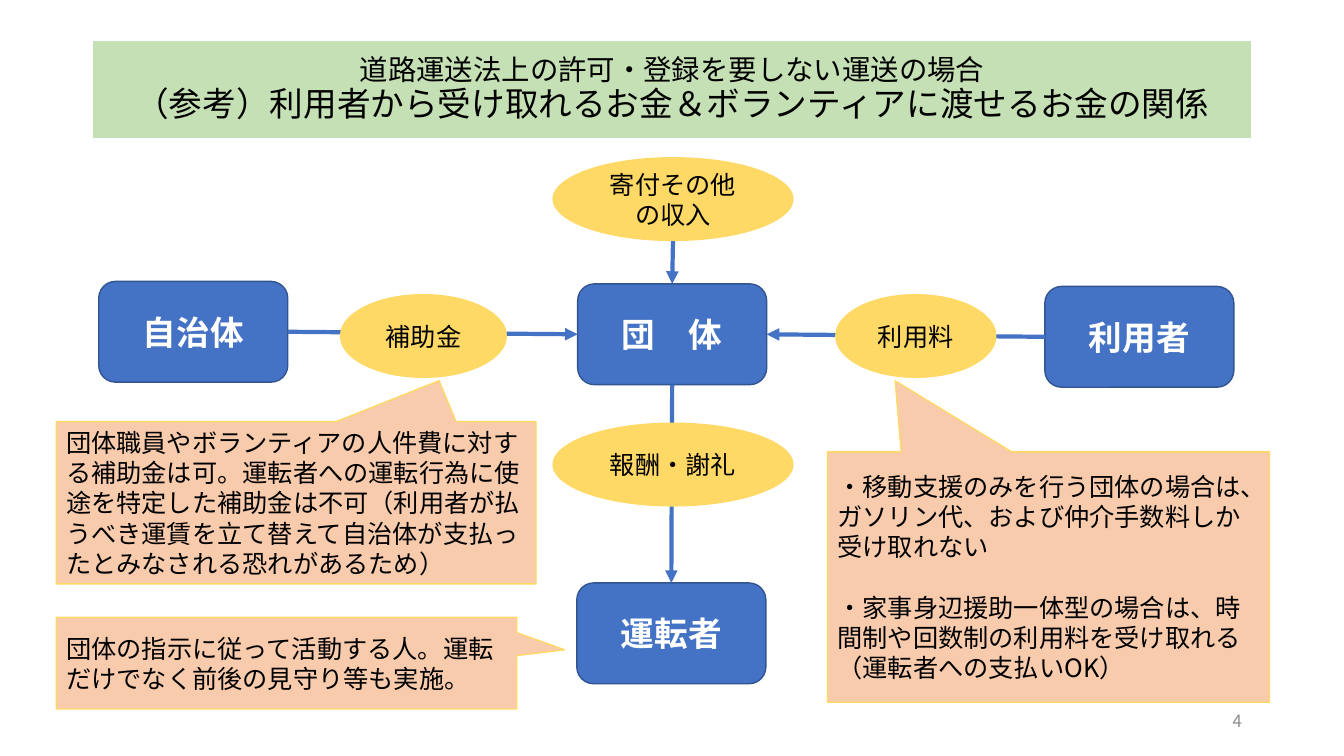
from lxml import etree
from pptx import Presentation
from pptx.dml.color import RGBColor
from pptx.enum.shapes import MSO_CONNECTOR, MSO_SHAPE
from pptx.enum.text import MSO_ANCHOR, PP_ALIGN
from pptx.oxml.ns import qn
from pptx.util import Inches, Pt

RECT, OVAL = MSO_SHAPE.RECTANGLE, MSO_SHAPE.OVAL
ROUNDED, CALLOUT = MSO_SHAPE.ROUNDED_RECTANGLE, MSO_SHAPE.RECTANGULAR_CALLOUT
STRAIGHT = MSO_CONNECTOR.STRAIGHT
MIDDLE = MSO_ANCHOR.MIDDLE
LEFT, CENTER, RIGHT = PP_ALIGN.LEFT, PP_ALIGN.CENTER, PP_ALIGN.RIGHT

FONT = "Noto Sans CJK JP"
COLORS = {
    "title": "C5E0B4", "node": "4472C4", "node_line": "325491",
    "money": "FFD966", "note": "F8CBAD", "white": "FFFFFF",
    "text": "000000", "page": "8C8C8C",
}

# The slide is a grid of 160 columns by 90 rows with square cells
SLIDE_W, SLIDE_H = Inches(13.33), Inches(7.5)
CELL = SLIDE_H / 90


def cells(*counts):
    return [round(n * CELL) for n in counts]


def rgb(name):
    return RGBColor.from_string(COLORS[name])


def add_text(sp, lines, size, color="text", align=CENTER, bold=False,
             gap=0, spacing=None):
    """Write (text, size) lines; a plain string takes the common size."""
    tf = sp.text_frame
    tf.word_wrap = True
    tf.vertical_anchor = MIDDLE
    for i, line in enumerate(lines):
        text, points = (line, size) if isinstance(line, str) else line
        p = tf.add_paragraph() if i else tf.paragraphs[0]
        p.alignment = align
        if i and gap:
            p.space_before = Pt(gap)
        if spacing:
            p.line_spacing = spacing
        r = p.add_run()
        r.text = text
        r.font.size, r.font.bold, r.font.name = Pt(points), bold, FONT
        r.font.color.rgb = rgb(color)
        ea = etree.SubElement(r.font._element, qn("a:ea"))
        ea.set("typeface", FONT)


def add_box(s, kind, box, fill, line=None, width=1):
    sp = s.shapes.add_shape(kind, *cells(*box))
    sp.shadow.inherit = False
    sp.fill.solid()
    sp.fill.fore_color.rgb = rgb(fill)
    if line:
        sp.line.color.rgb = rgb(line)
        sp.line.width = Pt(width)
    else:
        sp.line.fill.background()
    return sp


def add_arrow(s, start, end):
    cn = s.shapes.add_connector(STRAIGHT, *start, *end)
    cn.line.color.rgb = rgb("node")
    cn.line.width = Pt(3)
    etree.SubElement(cn.line._get_or_add_ln(), qn("a:tailEnd"), type="triangle")
    etree.SubElement(cn._element.spPr, qn("a:effectLst"))


def edge(sp, fx, fy):
    """Point on a shape at the given shares of its width and height."""
    return sp.left + round(sp.width * fx), sp.top + round(sp.height * fy)


def add_title(s, box):
    sp = add_box(s, RECT, box, "title", "white", 1.5)
    tf = sp.text_frame
    tf.margin_left = tf.margin_right = Inches(0.07)
    tf.margin_top = tf.margin_bottom = Inches(0.04)
    add_text(sp, [
        ("道路運送法上の許可・登録を要しない運送の場合", 20.3),
        "（参考）利用者から受け取れるお金＆ボランティアに渡せるお金の関係",
    ], 24, spacing=0.9)


def add_flow(s, left, top):
    """Parties, arrows and kinds of money, placed by their centres."""
    def node(text, cx, cy, w=22.5, h=12):
        box = left + cx - w / 2, top + cy - h / 2, w, h
        sp = add_box(s, ROUNDED, box, "node", "node_line")
        add_text(sp, [text], 24, "white", bold=True)
        return sp

    def money(text, cx, cy, w=28.7, h=10):
        box = left + cx - w / 2, top + cy - h / 2, w, h
        sp = add_box(s, OVAL, box, "money")
        add_text(sp, [text], 18)
        return sp

    # Parties
    group = node("団　体", 68.3, 21.1)
    town = node("自治体", 11.3, 20.8)
    user = node("利用者", 123.9, 21.4)
    driver = node("運転者", 68.2, 56.7)
    donation = money("寄付その他の収入", 68.4, 5)

    # Arrows
    add_arrow(s, edge(town, 1, 0.5), edge(group, 0, 0.5))
    add_arrow(s, edge(donation, 0.5, 1), edge(group, 0.5, 0))
    add_arrow(s, edge(user, 0, 0.5), edge(group, 1, 0.5))
    add_arrow(s, edge(group, 0.5, 1), edge(driver, 0.5, 0))

    # Money on top of the arrows
    money("報酬・謝礼", 68.4, 36.6)
    money("補助金", 38.7, 21.3, 19.9)
    money("利用料", 97.3, 21.3, 19.2)


def add_notes(s, left, top):
    """Callouts: offset and size, pointer tip, paragraphs."""
    notes = [
        ((91.8, 3.6, 52.6, 29.8), (-0.347, -0.784), [
            "・移動支援のみを行う団体の場合は、ガソリン代、および仲介手数料しか受け取れない",
            "・家事身辺援助一体型の場合は、時間制や回数制の利用料を受け取れる（運転者への支払いOK）",
        ]),
        ((0, 23.3, 54.8, 10.9), (0.604, -0.146), [
            "団体の指示に従って活動する人。運転だけでなく前後の見守り等も実施。",
        ]),
        ((0, 0, 57.1, 19.3), (0.298, -0.753), [
            "団体職員やボランティアの人件費に対する補助金は可。"
            "運転者への運転行為に使途を特定した補助金は不可"
            "（利用者が払うべき運賃を立て替えて自治体が支払ったとみなされる恐れがあるため）",
        ]),
    ]
    for (x, y, w, h), tip, lines in notes:
        sp = add_box(s, CALLOUT, (left + x, top + y, w, h), "note", "money")
        sp.adjustments[0], sp.adjustments[1] = tip
        add_text(sp, lines, 18, align=LEFT, gap=21.5)


def add_page_number(s, box):
    add_text(s.shapes.add_textbox(*cells(*box)), ["4"], 12, "page", RIGHT)


def main():
    prs = Presentation()
    prs.slide_width, prs.slide_height = SLIDE_W, SLIDE_H
    s = prs.slides.add_slide(prs.slide_layouts[6])
    add_title(s, (11, 4.8, 138, 11.8))
    add_flow(s, 11.7, 18.7)
    add_notes(s, 6.7, 50.2)
    add_page_number(s, (113, 83.4, 36, 4.8))
    prs.save("out.pptx")


if __name__ == "__main__":
    main()
